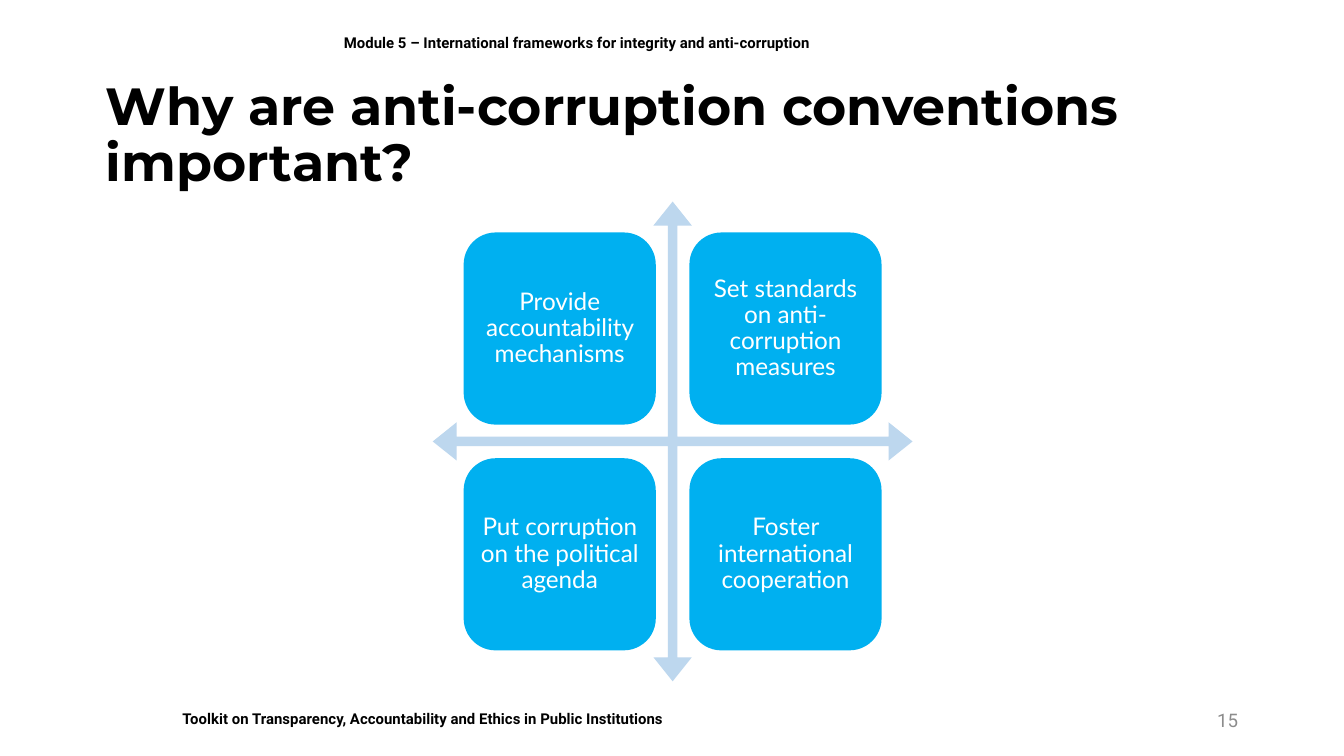
from pptx import Presentation
from pptx import util as u
from pptx.dml.color import RGBColor
from pptx.enum import shapes, text

BLACK = RGBColor(0x00, 0x00, 0x00)
WHITE = RGBColor(0xFF, 0xFF, 0xFF)
GREY = RGBColor(0x8C, 0x8C, 0x8C)
SKY_BLUE = RGBColor(0x00, 0xB0, 0xF0)
PALE_BLUE = RGBColor(0xBD, 0xD7, 0xEE)


def write_text(shape, wording, font_name, size, color, bold=False,
               align=text.PP_ALIGN.LEFT, anchor=text.MSO_ANCHOR.MIDDLE):
    """Fill the shape with one styled run and return its paragraph."""
    frame = shape.text_frame
    frame.word_wrap = True
    frame.vertical_anchor = anchor
    paragraph = frame.paragraphs[0]
    paragraph.alignment = align
    run = paragraph.add_run()
    run.text = wording
    run.font.name = font_name
    run.font.size = u.Pt(size)
    run.font.bold = bold
    run.font.color.rgb = color
    return paragraph


def add_filled_shape(preset, left, top, width, height, color):
    shape = slide.shapes.add_shape(
        preset, u.Inches(left), u.Inches(top), u.Inches(width), u.Inches(height))
    shape.shadow.inherit = False
    shape.fill.solid()
    shape.fill.fore_color.rgb = color
    shape.line.fill.background()
    return shape


presentation = Presentation()
presentation.slide_width = u.Inches(10)
presentation.slide_height = u.Inches(10) * 9 // 16
slide = presentation.slides.add_slide(presentation.slide_layouts[6])

# Footer, header, slide number and title
footer = add_filled_shape(shapes.MSO_SHAPE.RECTANGLE, 1.26, 5.23, 7.17, 0.24, WHITE)
write_text(footer, "Toolkit on Transparency, Accountability and Ethics in Public Institutions",
           "Roboto", 8, BLACK, bold=True, anchor=text.MSO_ANCHOR.TOP)

header = slide.shapes.add_textbox(
    u.Inches(2.46), u.Inches(0.1), u.Inches(6.85), u.Inches(0.44))
write_text(header, "Module 5 – International frameworks for integrity and anti-corruption",
           "Roboto", 8, BLACK, bold=True)

number = slide.shapes.add_textbox(
    u.Inches(7.06), u.Inches(5.21), u.Inches(2.25), u.Inches(0.3))
write_text(number, "15", "Roboto", 10, GREY, align=text.PP_ALIGN.RIGHT)

title = slide.shapes.add_textbox(
    u.Inches(0.69), u.Inches(0.64), u.Inches(8.62), u.Inches(0.75))
paragraph = write_text(title, "Why are anti-corruption conventions important?",
                       "Montserrat", 28, BLACK, bold=True)
paragraph.line_spacing = 0.9

# Four-way arrow behind a two by two grid of reasons
arrow = add_filled_shape(shapes.MSO_SHAPE.QUAD_ARROW, 3.22, 1.5, 3.57, 3.57, PALE_BLUE)
for index, value in enumerate((0.02, 0.04, 0.05)):
    arrow.adjustments[index] = value

GRID_LEFT, GRID_TOP, CARD_SIZE, CARD_STEP = 3.45, 1.73, 1.43, 1.68
reasons = [
    "Provide accountability mechanisms",
    "Set standards on anti-corruption measures",
    "Put corruption on the political agenda",
    "Foster international cooperation",
]
for index, reason in enumerate(reasons):
    row, column = divmod(index, 2)
    card = add_filled_shape(
        shapes.MSO_SHAPE.ROUNDED_RECTANGLE, GRID_LEFT + column * CARD_STEP,
        GRID_TOP + row * CARD_STEP, CARD_SIZE, CARD_SIZE, SKY_BLUE)
    frame = card.text_frame
    frame.margin_left = frame.margin_right = u.Inches(0.05)
    frame.margin_top = frame.margin_bottom = u.Inches(0.05)
    paragraph = write_text(card, reason, "Lato", 13, WHITE, align=text.PP_ALIGN.CENTER)
    paragraph.line_spacing = 0.9

presentation.save("out.pptx")
